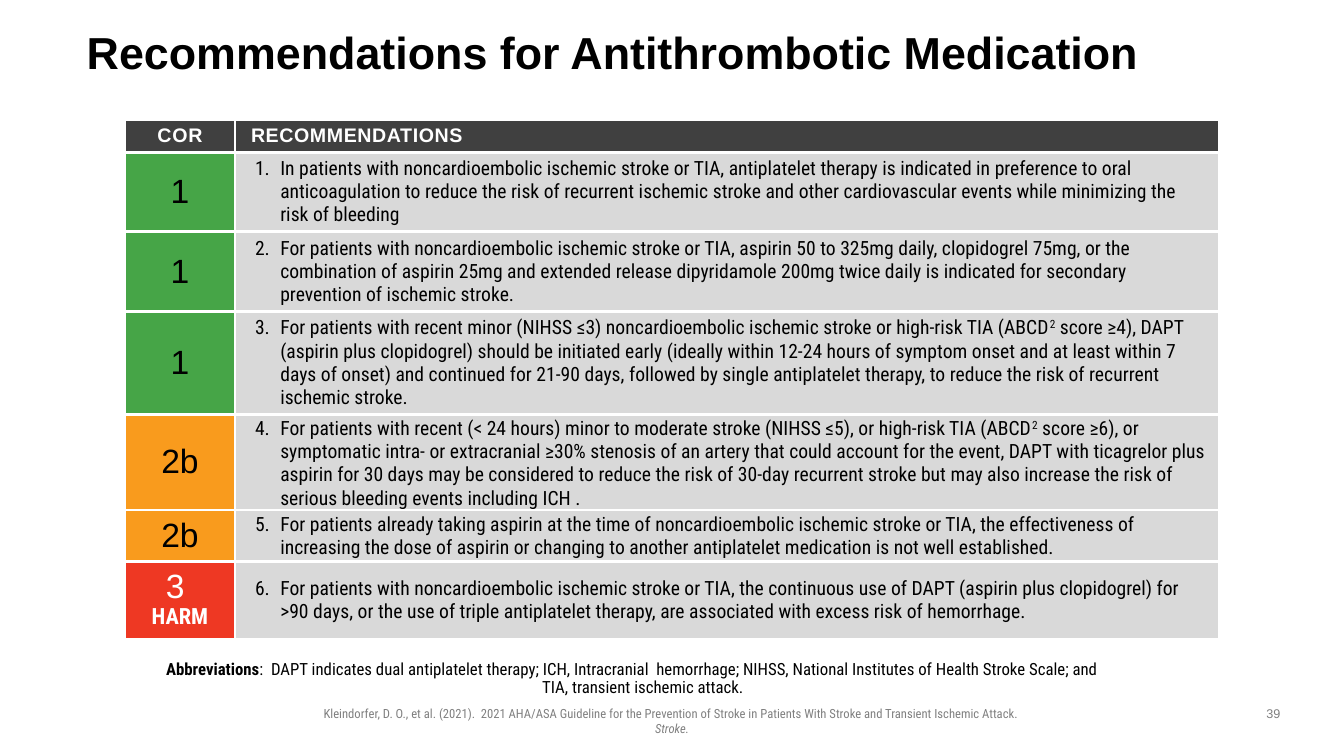
"""Build the slide of graded recommendations for antithrombotic medication."""
from lxml import etree
from pptx import Presentation
from pptx import util as u
from pptx.dml.color import RGBColor
from pptx.enum import text
from pptx.oxml import ns

PX = 9144
BLACK = RGBColor(0, 0, 0)
WHITE = RGBColor(255, 255, 255)
CHARCOAL = RGBColor(0x40, 0x40, 0x40)
GRAY = RGBColor(0x80, 0x80, 0x80)
SILVER = RGBColor(0xD9, 0xD9, 0xD9)
GREEN = RGBColor(0x46, 0xA5, 0x47)
ORANGE = RGBColor(0xF9, 0x9B, 0x1D)
RED = RGBColor(0xEE, 0x38, 0x23)
SANS = "Arial"
CONDENSED = "Roboto Condensed"
CENTER = text.PP_ALIGN.CENTER
MIDDLE = text.MSO_ANCHOR.MIDDLE
TOP = text.MSO_ANCHOR.TOP

COLUMN_WIDTHS = [109, 976]
HEADER_HEIGHT = 32
EVEN_INSETS = (5, 5, 5, 5)
ROOMY_INSETS = (20, 5, 10, 5)
TIGHT_INSETS = (20, 3, 10, 0)

RECOMMENDATIONS = [
    ("1", GREEN, 77, MIDDLE, ROOMY_INSETS, [
        "In patients with noncardioembolic ischemic stroke or TIA, antiplatelet therapy is indicated "
        "in preference to oral anticoagulation to reduce the risk of recurrent ischemic stroke and "
        "other cardiovascular events while minimizing the risk of bleeding"]),
    ("1", GREEN, 77, MIDDLE, ROOMY_INSETS, [
        "For patients with noncardioembolic ischemic stroke or TIA, aspirin 50 to 325mg daily, "
        "clopidogrel 75mg, or the combination of aspirin 25mg and extended release dipyridamole "
        "200mg twice daily is indicated for secondary prevention of ischemic stroke."]),
    ("1", GREEN, 100, MIDDLE, ROOMY_INSETS, [
        "For patients with recent minor (NIHSS ≤3) noncardioembolic ischemic stroke or high-risk TIA (ABCD",
        "2",
        " score ≥4), DAPT (aspirin plus clopidogrel) should be initiated early (ideally within 12-24 "
        "hours of symptom onset and at least within 7 days of onset) and continued for 21-90 days, "
        "followed by single antiplatelet therapy, to reduce the risk of recurrent ischemic stroke."]),
    ("2b", ORANGE, 95, TOP, TIGHT_INSETS, [
        "For patients with recent (< 24 hours) minor to moderate stroke (NIHSS ≤5), or high-risk TIA (ABCD",
        "2",
        " score ≥6), or symptomatic intra- or extracranial ≥30% stenosis of an artery that could "
        "account for the event, DAPT with ticagrelor plus aspirin for 30 days may be considered to "
        "reduce the risk of 30-day recurrent stroke but may also increase the risk of serious "
        "bleeding events including ICH ."]),
    ("2b", ORANGE, 51, TOP, TIGHT_INSETS, [
        "For patients already taking aspirin at the time of noncardioembolic ischemic stroke or TIA, "
        "the effectiveness of increasing the dose of aspirin or changing to another antiplatelet "
        "medication is not well established."]),
    ("3 \vHARM", RED, 77, MIDDLE, ROOMY_INSETS, [
        "For patients with noncardioembolic ischemic stroke or TIA, the continuous use of DAPT "
        "(aspirin plus clopidogrel) for >90 days, or the use of triple antiplatelet therapy, are "
        "associated with excess risk of hemorrhage."]),
]


def box(*lengths):
    """Turn px lengths into EMU."""
    return [length * PX for length in lengths]


def style(run, size, face, color, bold=False, italic=False):
    """Set the font of a run."""
    font = run.font
    font.size, font.name = u.Pt(size), face
    font.bold, font.italic = bold, italic
    font.color.rgb = color


def set_insets(frame, insets):
    """Set the inner margins of a text frame or cell."""
    (frame.margin_left, frame.margin_top,
     frame.margin_right, frame.margin_bottom) = box(*insets)


def indent(paragraph, left, first=0):
    """Set the left margin and first-line indent of a paragraph."""
    properties = paragraph._p.get_or_add_pPr()
    properties.set("marL", str(left * PX))
    properties.set("indent", str(first * PX))
    return properties


def add_number(paragraph, start):
    """Number a paragraph with a hanging indent."""
    properties = indent(paragraph, 25, -25)
    etree.SubElement(properties, ns.qn("a:buFont"), typeface="+mj-lt")
    etree.SubElement(properties, ns.qn("a:buAutoNum"), type="arabicPeriod", startAt=str(start))


def format_cell(cell, fill, insets, anchor=MIDDLE):
    """Give a cell white borders, a fill, insets and an anchor."""
    properties = cell._tc.get_or_add_tcPr()
    for side in ("lnL", "lnR", "lnT", "lnB"):
        border = etree.SubElement(properties, ns.qn("a:" + side), w=str(u.Pt(2.25)))
        paint = etree.SubElement(border, ns.qn("a:solidFill"))
        etree.SubElement(paint, ns.qn("a:srgbClr"), val=str(WHITE))
    cell.fill.solid()
    cell.fill.fore_color.rgb = fill
    set_insets(cell, insets)
    cell.vertical_anchor = anchor


def fill_header(cell, label, spacing):
    """Write a column heading."""
    format_cell(cell, CHARCOAL, (10, 5, 10, 5))
    heading = cell.text_frame.paragraphs[0]
    heading.text = label
    style(heading.runs[0], 14, SANS, WHITE, bold=True)
    heading.runs[0]._r.get_or_add_rPr().set("spc", str(spacing))
    return heading


def fill_grade(cell, grade, color):
    """Write a class of recommendation, with any warning under it."""
    format_cell(cell, color, EVEN_INSETS)
    paragraph = cell.text_frame.paragraphs[0]
    paragraph.text = grade
    paragraph.alignment = CENTER
    level, *warnings = paragraph.runs
    style(level, 24, SANS, WHITE if warnings else BLACK)
    for warning in warnings:
        paragraph.line_spacing = 0.9
        style(warning, 16, CONDENSED, WHITE, bold=True)


def fill_advice(cell, number, parts, anchor, insets):
    """Write a numbered recommendation, every second part raised."""
    format_cell(cell, SILVER, insets, anchor)
    paragraph = cell.text_frame.paragraphs[0]
    add_number(paragraph, number)
    for index, part in enumerate(parts):
        run = paragraph.add_run()
        run.text = part
        style(run, 14, CONDENSED, BLACK)
        if index % 2:
            run._r.get_or_add_rPr().set("baseline", "30000")


def add_recommendations(slide):
    """Add the table of recommendations."""
    heights = [HEADER_HEIGHT] + [row[2] for row in RECOMMENDATIONS]
    table = slide.shapes.add_table(
        len(heights), 2, *box(124, 119, sum(COLUMN_WIDTHS), sum(heights))).table
    for column, width in zip(table.columns, COLUMN_WIDTHS):
        column.width = width * PX
    for row, height in zip(table.rows, heights):
        row.height = height * PX
    fill_header(table.cell(0, 0), "COR", 50).alignment = CENTER
    indent(fill_header(table.cell(0, 1), "RECOMMENDATIONS", 40), 6)
    for number, (grade, color, _, anchor, insets, parts) in enumerate(RECOMMENDATIONS, 1):
        fill_grade(table.cell(number, 0), grade, color)
        fill_advice(table.cell(number, 1), number, parts, anchor, insets)


def add_title(slide, wording):
    """Place and format the title."""
    title = slide.shapes.title
    title.left, title.top, title.width, title.height = box(86, 19, 1123, 72)
    frame = title.text_frame
    frame.text = wording
    frame.auto_size = text.MSO_AUTO_SIZE.NONE
    frame.vertical_anchor = MIDDLE
    set_insets(frame, (0, 0, 0, 0))
    heading = frame.paragraphs[0]
    heading.alignment = text.PP_ALIGN.LEFT
    heading.line_spacing = 0.9
    style(heading.runs[0], 32, SANS, BLACK, bold=True)


def add_note(slide, place, insets, runs):
    """Add a centred note made of runs with their fonts."""
    frame = slide.shapes.add_textbox(*box(*place)).text_frame
    frame.word_wrap = True
    set_insets(frame, insets)
    paragraph = frame.paragraphs[0]
    paragraph.alignment = CENTER
    for wording, *font in runs:
        run = paragraph.add_run()
        run.text = wording
        style(run, *font)
    return paragraph


def main():
    """Build and save the slide."""
    deck = Presentation()
    deck.slide_width, deck.slide_height = box(1333, 750)
    slide = deck.slides.add_slide(deck.slide_layouts[5])
    add_title(slide, "Recommendations for Antithrombotic Medication")
    add_recommendations(slide)
    abbreviations = add_note(slide, (151, 651, 962, 44), (0, 5, 10, 5), [
        ("Abbreviations", 12, CONDENSED, BLACK, True),
        (":  DAPT indicates dual antiplatelet therapy; ICH, Intracranial  hemorrhage; NIHSS, National "
         "Institutes of Health Stroke Scale; and TIA, transient ischemic attack. ", 12, CONDENSED, BLACK)])
    abbreviations.line_spacing = 0.9
    indent(abbreviations, 25, -25)
    add_note(slide, (294, 695, 745, 25), (10, 5, 10, 5), [
        ("Kleindorfer, D. O., et al. (2021).  2021 AHA/ASA Guideline for the Prevention of Stroke in "
         "Patients With Stroke and Transient Ischemic Attack.  ", 9, CONDENSED, GRAY),
        ("Stroke.", 9, CONDENSED, GRAY, False, True)])
    add_note(slide, (1242, 695, 42, 26), (10, 5, 10, 5), [("39", 9, SANS, GRAY)])
    deck.save("out.pptx")


if __name__ == "__main__":
    main()
